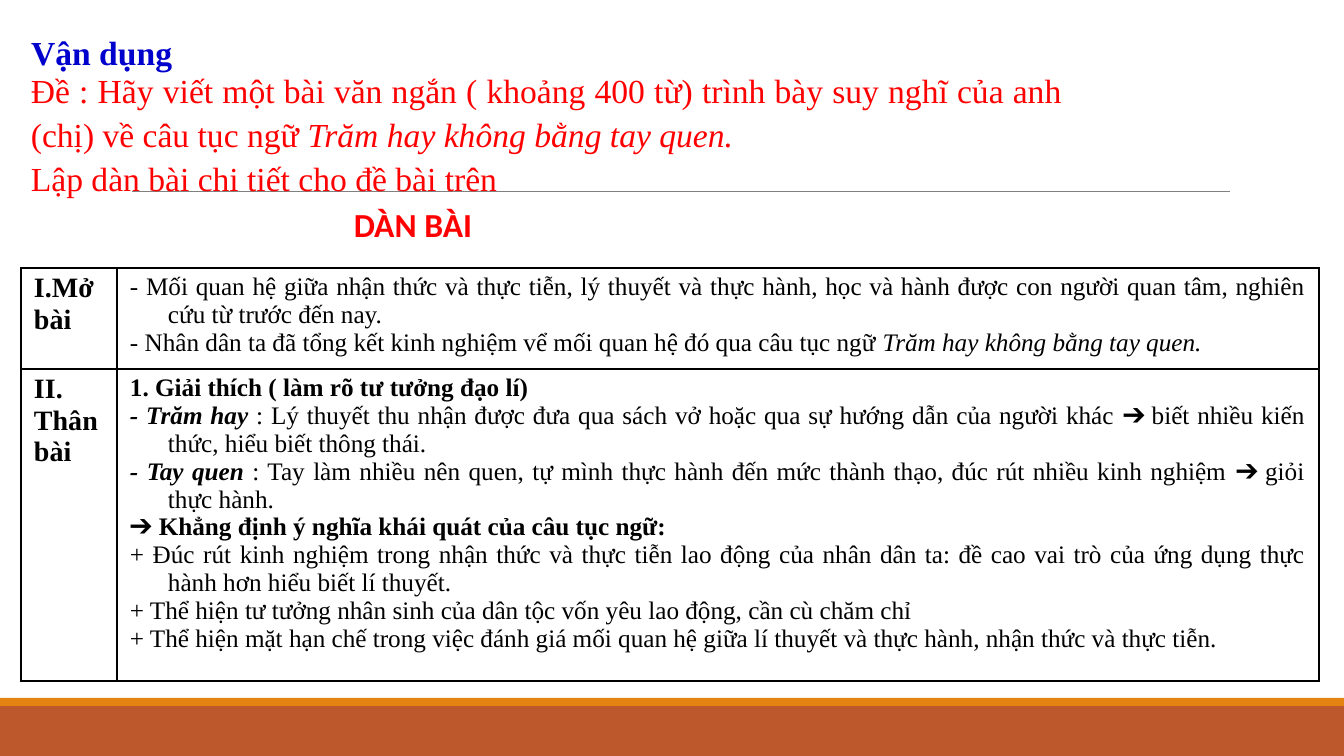
from lxml.etree import SubElement
from pptx import Presentation
from pptx.dml.color import RGBColor
from pptx.enum.shapes import MSO_CONNECTOR as Connector, MSO_SHAPE as Shape
from pptx.enum.text import MSO_ANCHOR as Anchor, MSO_AUTO_SIZE as AutoSize, PP_ALIGN as Align
from pptx.oxml.ns import qn
from pptx.util import Emu, Pt

SLIDE_SIZE = (1344, 756)
SERIF = "Times New Roman"
BLACK, RED, BLUE = "000000", "FF0000", "0000CC"

TITLE = [[("Vận dụng", "b")]]
TASK = [
    [("Đề : Hãy viết một bài văn ngắn ( khoảng 400 từ) trình bày suy nghĩ của anh (chị) về câu tục ngữ ", ""),
     ("Trăm hay không bằng tay quen.", "i")],
    [("Lập dàn bài chi tiết cho đề bài trên", "")],
]
OUTLINE_HEADING = [[("DÀN BÀI", "b")]]
OUTLINE = [
    ("I.Mở bài", [
        [("- Mối quan hệ giữa nhận thức và thực tiễn, lý thuyết và thực hành, học và hành được con người "
          "quan tâm, nghiên cứu từ trước đến nay.", "")],
        [("- Nhân dân ta đã tổng kết kinh nghiệm vể mối quan hệ đó qua câu tục ngữ ", ""),
         ("Trăm hay không bằng tay quen.", "i")],
    ]),
    ("II. Thân bài", [
        [("1. Giải thích ( làm rõ tư tưởng đạo lí)", "b")],
        [("- Trăm hay", "bi"),
         (" : Lý thuyết thu nhận được đưa qua sách vở hoặc qua sự hướng dẫn của người khác ➔ biết nhiều "
          "kiến thức, hiểu biết thông thái.", "")],
        [("- Tay quen", "bi"),
         (" : Tay làm nhiều nên quen, tự mình thực hành đến mức thành thạo, đúc rút nhiều kinh nghiệm "
          "➔ giỏi thực hành.", "")],
        [("➔ ", ""), ("Khẳng định ý nghĩa khái quát của câu tục ngữ:", "b")],
        [("+ Đúc rút kinh nghiệm trong nhận thức và thực tiễn lao động của nhân dân ta: đề cao vai trò của "
          "ứng dụng thực hành hơn hiểu biết lí thuyết.", "")],
        [("+ Thể hiện tư tưởng nhân sinh của dân tộc vốn yêu lao động, cần cù chăm chỉ", "")],
        [("+ Thể hiện mặt hạn chế trong việc đánh giá mối quan hệ giữa lí thuyết và thực hành, "
          "nhận thức và thực tiễn.", "")],
    ]),
]
TABLE_ORIGIN = (21, 268)
COLUMN_WIDTHS = (96, 1202)
ROW_HEIGHTS = (101, 312)
FOOTER_BANDS = [((0, 706, 1344, 50), "BD582C"), ((0, 698, 1344, 8), "E48312")]
RULE_LINE = (132, 191, 1230, 191)


def px(value):
    return Emu(round(value * 12192000 / 1344))


def box(*lengths):
    return [px(length) for length in lengths]


def color(value):
    return RGBColor.from_string(value)


def write(frame, paragraphs, size=24, ink=BLACK, font=SERIF, align=Align.LEFT, spacing=1.0, hanging=0):
    for index, runs in enumerate(paragraphs):
        paragraph = frame.paragraphs[0] if index == 0 else frame.add_paragraph()
        paragraph.alignment = align
        paragraph.line_spacing = spacing
        paragraph.space_before = Pt(0)
        if hanging:
            properties = paragraph._p.get_or_add_pPr()
            properties.set("marL", str(px(hanging)))
            properties.set("indent", str(-px(hanging)))
        for text, style in runs:
            run = paragraph.add_run()
            run.text = text
            run.font.size = Pt(size)
            run.font.name = font
            run.font.color.rgb = color(ink)
            run.font.bold = "b" in style
            run.font.italic = "i" in style


def place_text(shape, bounds, paragraphs, anchor=Anchor.TOP, wrap=True, **text_format):
    shape.left, shape.top, shape.width, shape.height = box(*bounds)
    frame = shape.text_frame
    frame.word_wrap = wrap
    frame.auto_size = AutoSize.NONE
    frame.vertical_anchor = anchor
    write(frame, paragraphs, **text_format)


def format_cell(cell, paragraphs, **text_format):
    cell.margin_left = cell.margin_right = px(13)
    cell.margin_top = cell.margin_bottom = px(5)
    properties = cell._tc.get_or_add_tcPr()
    for side in ("lnL", "lnR", "lnT", "lnB"):
        border = SubElement(properties, qn(f"a:{side}"), w=str(Pt(1)))
        fill = SubElement(border, qn("a:solidFill"))
        SubElement(fill, qn("a:srgbClr"), val=BLACK)
    cell.fill.background()
    write(cell.text_frame, paragraphs, align=Align.JUSTIFY, **text_format)


def add_outline(slide):
    bounds = box(*TABLE_ORIGIN, sum(COLUMN_WIDTHS), sum(ROW_HEIGHTS))
    table = slide.shapes.add_table(len(ROW_HEIGHTS), len(COLUMN_WIDTHS), *bounds).table
    table.first_row = table.horz_banding = False
    for column, width in zip(table.columns, COLUMN_WIDTHS):
        column.width = px(width)
    for row, height, (part, points) in zip(table.rows, ROW_HEIGHTS, OUTLINE):
        row.height = px(height)
        format_cell(row.cells[0], [[(part, "b")]], size=20)
        format_cell(row.cells[1], points, size=18, hanging=38)


def main():
    presentation = Presentation()
    presentation.slide_width, presentation.slide_height = box(*SLIDE_SIZE)
    slide = presentation.slides.add_slide(presentation.slide_layouts[5])
    shapes = slide.shapes
    for bounds, fill in FOOTER_BANDS:
        band = shapes.add_shape(Shape.RECTANGLE, *box(*bounds))
        band.shadow.inherit = False
        band.fill.solid()
        band.fill.fore_color.rgb = color(fill)
        band.line.fill.background()
    rule = shapes.add_connector(Connector.STRAIGHT, *box(*RULE_LINE))
    rule.line.color.rgb = color("808080")
    rule.line.width = Pt(0.5)
    SubElement(rule._element.spPr, qn("a:effectLst"))
    place_text(shapes.title, (21, 23, 926, 50), TITLE, ink=BLUE, spacing=1.09)
    place_text(shapes.add_textbox(0, 0, 0, 0), (21, 66, 1051, 132), TASK,
               anchor=Anchor.MIDDLE, ink=RED, align=Align.JUSTIFY, spacing=1.09)
    add_outline(slide)
    place_text(shapes.add_textbox(0, 0, 0, 0), (344, 199, 140, 50), OUTLINE_HEADING,
               wrap=False, ink=RED, font="Calibri")
    presentation.save("out.pptx")


if __name__ == "__main__":
    main()
